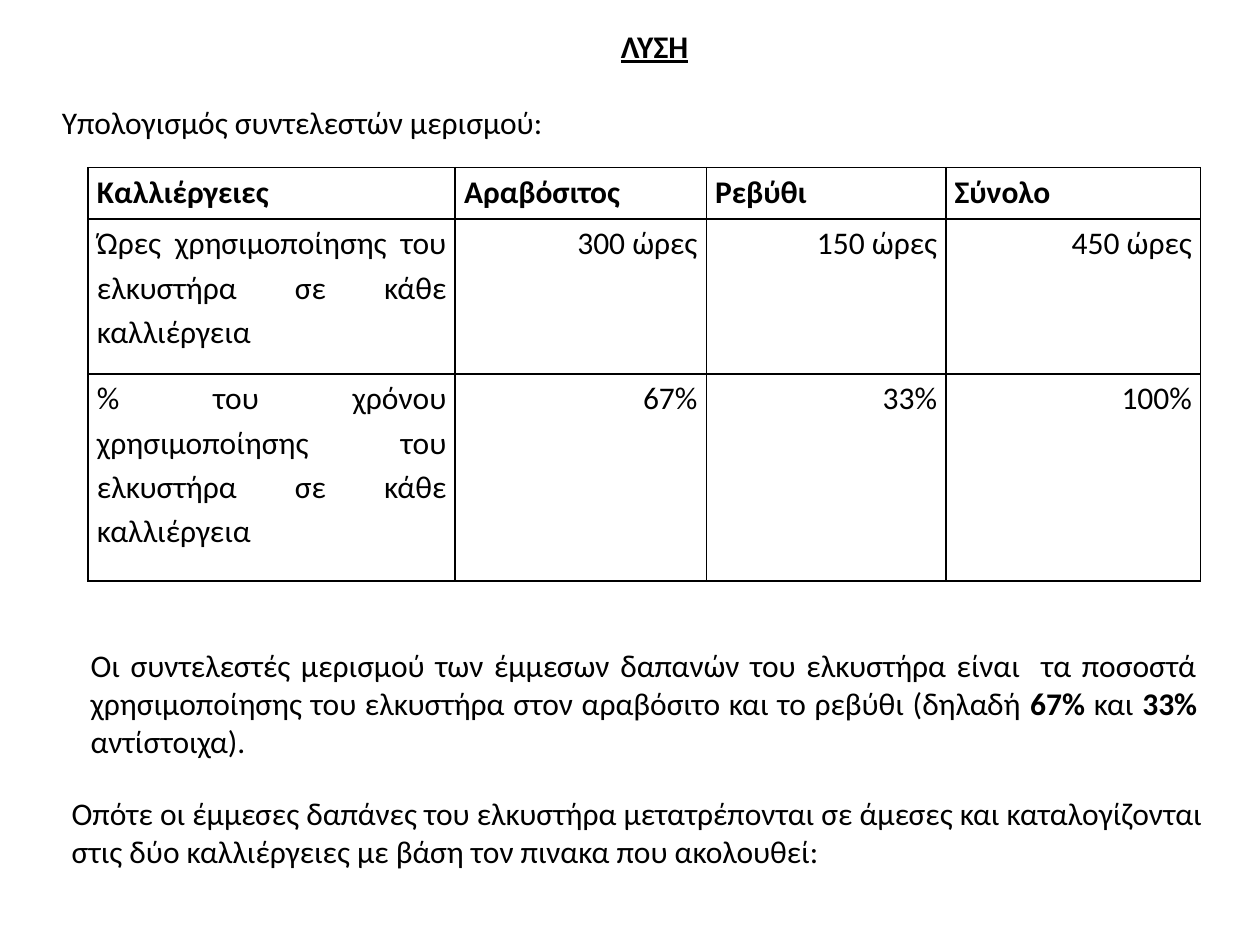
from lxml import etree
from pptx import Presentation
from pptx.dml.color import RGBColor
from pptx.enum.text import MSO_ANCHOR, MSO_AUTO_SIZE, PP_ALIGN
from pptx.oxml.ns import qn
from pptx.util import Inches, Pt

LEFT, CENTER, RIGHT, JUSTIFY = (PP_ALIGN.LEFT, PP_ALIGN.CENTER,
                                PP_ALIGN.RIGHT, PP_ALIGN.JUSTIFY)
TOP, MIDDLE = MSO_ANCHOR.TOP, MSO_ANCHOR.MIDDLE
FIT_SHAPE = MSO_AUTO_SIZE.SHAPE_TO_FIT_TEXT
FONT, SIZE, BLACK = "Calibri", 18, "000000"

HEADING = "ΛΥΣΗ"
INTRO = "Υπολογισμός συντελεστών μερισμού:"
ROWS = [
    ["Καλλιέργειες", "Αραβόσιτος", "Ρεβύθι", "Σύνολο"],
    ["Ώρες χρησιμοποίησης του ελκυστήρα σε κάθε καλλιέργεια",
     "300 ώρες", "150 ώρες", "450 ώρες"],
    ["% του χρόνου χρησιμοποίησης του ελκυστήρα σε κάθε καλλιέργεια",
     "67%", "33%", "100%"],
]
COL_WIDTHS = [2.91, 1.99, 1.9, 2.02]
ROW_HEIGHTS = [0.41, 1.23, 1.64]
# Each part is (text, bold)
COEFFICIENTS = [
    ("Οι συντελεστές μερισμού των έμμεσων δαπανών του ελκυστήρα είναι  τα "
     "ποσοστά χρησιμοποίησης του ελκυστήρα στον αραβόσιτο και το ρεβύθι "
     "(δηλαδή ", False),
    ("67%", True), (" και ", False), ("33%", True), (" αντίστοιχα).", False),
]
CONCLUSION = [
    ("Οπότε οι έμμεσες δαπάνες του ελκυστήρα μετατρέπονται σε άμεσες και "
     "καταλογίζονται στις δύο καλλιέργειες με βάση τον πινακα που ακολουθεί:",
     False),
]


def rgb(value):
    return RGBColor.from_string(value)


def write(p, parts, align):
    p.alignment = align
    for text, bold in parts:
        r = p.add_run()
        r.text = text
        r.font.name, r.font.size, r.font.bold = FONT, Pt(SIZE), bold
        r.font.color.rgb = rgb(BLACK)


def add_heading(slide, left, top, width, height):
    sp = slide.shapes.title
    sp.left, sp.top, sp.width, sp.height = map(Inches, (left, top, width, height))
    tf = sp.text_frame
    tf.word_wrap, tf.auto_size, tf.vertical_anchor = True, FIT_SHAPE, MIDDLE
    p = tf.paragraphs[0]
    write(p, [(HEADING, True)], CENTER)
    p.runs[0].font.underline = True
    # One line of space sets the introduction apart
    p = tf.add_paragraph()
    p.space_before = Pt(SIZE * 1.2)
    write(p, [(INTRO, False)], JUSTIFY)


def add_paragraph_box(slide, left, top, width, height, parts, align):
    sp = slide.shapes.add_textbox(*map(Inches, (left, top, width, height)))
    tf = sp.text_frame
    tf.word_wrap, tf.auto_size = True, FIT_SHAPE
    write(tf.paragraphs[0], parts, align)


def set_borders(cell, color, width):
    tc_pr = cell._tc.get_or_add_tcPr()
    for i, side in enumerate(("a:lnL", "a:lnR", "a:lnT", "a:lnB")):
        ln = etree.Element(qn(side), w=str(Pt(width)))
        fill = etree.SubElement(ln, qn("a:solidFill"))
        etree.SubElement(fill, qn("a:srgbClr"), val=color)
        tc_pr.insert(i, ln)


def add_allocation_table(slide, left, top, width, height):
    table = slide.shapes.add_table(
        len(ROWS), len(COL_WIDTHS),
        *map(Inches, (left, top, width, height))).table
    table.horz_banding = False
    for column, w in zip(table.columns, COL_WIDTHS):
        column.width = Inches(w * width / sum(COL_WIDTHS))
    for row, h in zip(table.rows, ROW_HEIGHTS):
        row.height = Inches(h * height / sum(ROW_HEIGHTS))
    for i, texts in enumerate(ROWS):
        for j, text in enumerate(texts):
            cell = table.cell(i, j)
            cell.margin_left = cell.margin_right = Inches(0.07)
            cell.margin_top = cell.margin_bottom = 0
            cell.vertical_anchor = TOP
            cell.fill.background()
            set_borders(cell, BLACK, 1)
            p = cell.text_frame.paragraphs[0]
            p.line_spacing = 1.15
            write(p, [(text, i == 0)], RIGHT if i and j else JUSTIFY)


def main():
    prs = Presentation()
    prs.slide_width, prs.slide_height = Inches(10), Inches(7.5)
    slide = prs.slides.add_slide(prs.slide_layouts[5])
    add_allocation_table(slide, 0.7, 1.33, 8.83, 3.28)
    add_heading(slide, 0.39, 0.16, 9.61, 1.01)
    add_paragraph_box(slide, 0.62, 5.08, 8.98, 1.01, COEFFICIENTS, JUSTIFY)
    add_paragraph_box(slide, 0.47, 6.25, 9.22, 0.71, CONCLUSION, LEFT)
    prs.save("out.pptx")


if __name__ == "__main__":
    main()
